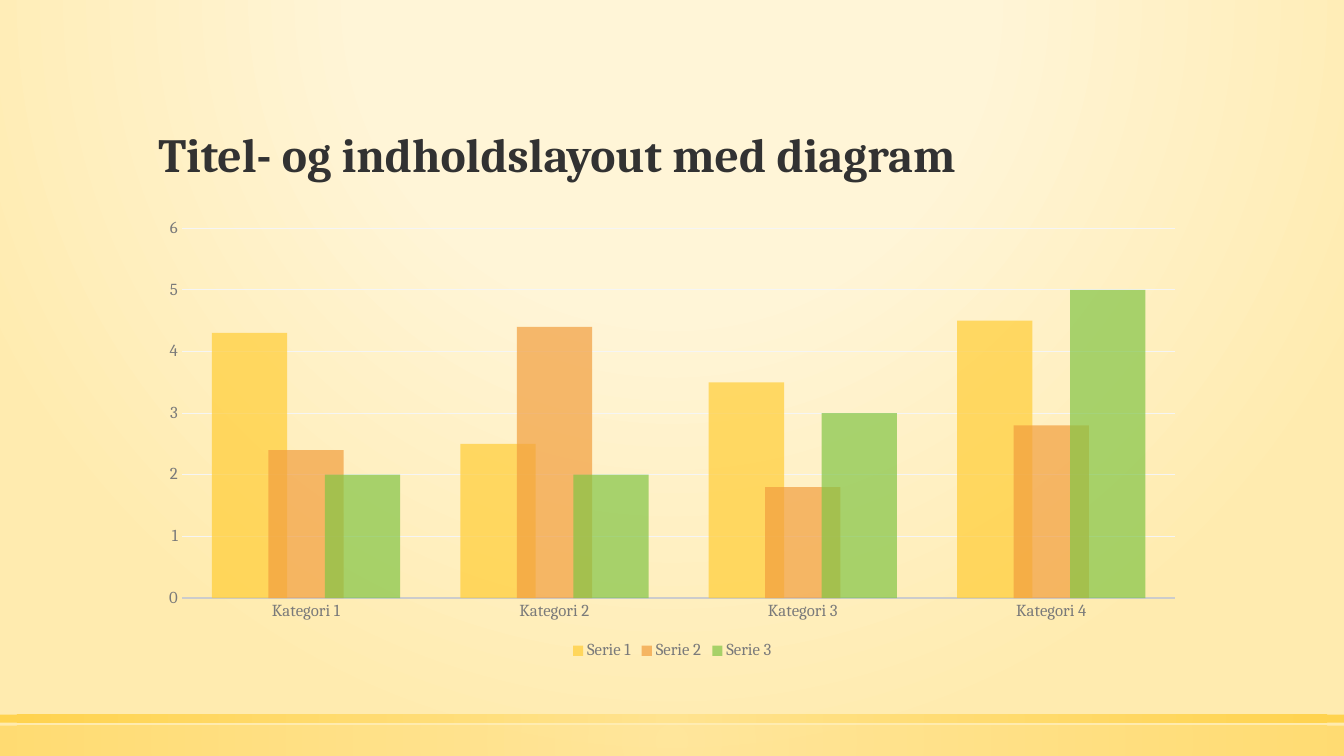
from lxml.etree import SubElement
from pptx import Presentation
from pptx.chart.data import CategoryChartData
from pptx.dml.color import RGBColor
from pptx.enum.chart import XL_CHART_TYPE, XL_LEGEND_POSITION, XL_TICK_MARK
from pptx.enum.shapes import MSO_SHAPE
from pptx.enum.text import MSO_ANCHOR, PP_ALIGN
from pptx.oxml.ns import qn
from pptx.util import Pt

INK = RGBColor(0x32, 0x32, 0x32)
GRAY = RGBColor(0x7A, 0x7A, 0x7A)
AXIS = RGBColor(0xCC, 0xCC, 0xCC)
GRID = RGBColor(0xF5, 0xF5, 0xF5)
CREAM = RGBColor(0xFF, 0xF5, 0xD7)
SAND = RGBColor(0xFF, 0xEB, 0xAF)
LEMON = RGBColor(0xFF, 0xE1, 0x86)
YELLOW = RGBColor(0xFF, 0xCD, 0x36)
ORANGE = RGBColor(0xF2, 0x9E, 0x3E)
GREEN = RGBColor(0x83, 0xC5, 0x46)

WIDTH, HEIGHT = 960, 540
LEFT, CONTENT_WIDTH = 105.84, 748.8

CATEGORIES = [f"Kategori {number}" for number in range(1, 5)]
SERIES = [
    ("Serie 1", (4.3, 2.5, 3.5, 4.5), YELLOW),
    ("Serie 2", (2.4, 4.4, 1.8, 2.8), ORANGE),
    ("Serie 3", (2, 2, 3, 5), GREEN),
]


def style_font(font, size, color, bold=False):
    font.name = "Cambria"
    font.size = Pt(size)
    font.bold = bold
    font.color.rgb = color


def write_text(frame, text, size=12, color=INK, bold=False,
               align=PP_ALIGN.LEFT, anchor=MSO_ANCHOR.TOP, spacing=1.0):
    frame.word_wrap = True
    frame.vertical_anchor = anchor
    para = frame.paragraphs[0]
    para.alignment = align
    para.line_spacing = spacing
    span = para.add_run()
    span.text = text
    style_font(span.font, size, color, bold)


def set_alpha(color_node, percent):
    SubElement(color_node, qn("a:alpha"), val=str(percent * 1000))


def radial_fill(fill, element, stops, focus=(50, 50, 50, 50)):
    fill.gradient()
    gradient = next(element.iter(qn("a:gradFill")))
    for child in list(gradient):
        gradient.remove(child)
    stop_list = SubElement(gradient, qn("a:gsLst"))
    for position, color, alpha in stops:
        stop = SubElement(stop_list, qn("a:gs"), pos=str(position * 1000))
        set_alpha(SubElement(stop, qn("a:srgbClr"), val=str(color)), alpha)
    shade = SubElement(gradient, qn("a:path"), {"path": "circle"})
    sides = {side: str(value * 1000) for side, value in zip("ltrb", focus)}
    SubElement(shade, qn("a:fillToRect"), sides)


class SlideBuilder:
    def __init__(self, deck):
        self.page = deck.slides.add_slide(deck.slide_layouts[5])

    def background(self, stops, focus):
        radial_fill(self.page.background.fill, self.page.element, stops, focus)

    def band(self, top, height, alpha):
        band = self.page.shapes.add_shape(
            MSO_SHAPE.RECTANGLE, 0, Pt(top), Pt(WIDTH), Pt(height))
        band.shadow.inherit = False
        radial_fill(band.fill, band.element,
                    [(0, LEMON, alpha), (100, YELLOW, alpha)])
        band.line.fill.background()

    def title(self, text, top, height):
        box = self.page.shapes.title
        box.left, box.top = Pt(LEFT), Pt(top)
        box.width, box.height = Pt(CONTENT_WIDTH), Pt(height)
        write_text(box.text_frame, text, size=34, bold=True,
                   anchor=MSO_ANCHOR.BOTTOM, spacing=0.9)

    def column_chart(self, top, height):
        data = CategoryChartData()
        data.categories = CATEGORIES
        for name, values, _ in SERIES:
            data.add_series(name, values)
        chart = self.page.shapes.add_chart(
            XL_CHART_TYPE.COLUMN_CLUSTERED, Pt(LEFT), Pt(top),
            Pt(CONTENT_WIDTH), Pt(height), data).chart
        style_font(chart.font, 10, INK)
        chart.has_title = False
        chart.has_legend = True
        chart.legend.position = XL_LEGEND_POSITION.BOTTOM
        chart.legend.include_in_layout = False
        style_font(chart.legend.font, 12, GRAY)
        self.format_axes(chart)
        self.format_series(chart.plots[0])

    def format_axes(self, chart):
        category, value = chart.category_axis, chart.value_axis
        for axis in (category, value):
            axis.major_tick_mark = XL_TICK_MARK.NONE
            axis.minor_tick_mark = XL_TICK_MARK.NONE
            style_font(axis.tick_labels.font, 12, GRAY)
        category.format.line.color.rgb = AXIS
        category.format.line.width = Pt(1.25)
        value.format.line.fill.background()
        value.minimum_scale, value.maximum_scale, value.major_unit = 0, 6, 1
        value.has_major_gridlines = True
        grid = value.major_gridlines.format.line
        grid.color.rgb = GRID
        grid.width = Pt(0.75)

    def format_series(self, plot):
        plot.vary_by_categories = False
        plot.gap_width = 80
        plot.overlap = 25
        for series, (_, _, color) in zip(plot.series, SERIES):
            series.invert_if_negative = False
            series.format.fill.solid()
            series.format.fill.fore_color.rgb = color
            set_alpha(next(series.format.element.iter(qn("a:srgbClr")))
                      if hasattr(series.format, "element")
                      else next(series._element.iter(qn("a:srgbClr"))), 70)
            series.format.line.fill.background()


def main():
    deck = Presentation()
    deck.slide_width, deck.slide_height = Pt(WIDTH), Pt(HEIGHT)
    builder = SlideBuilder(deck)
    builder.background([(0, CREAM, 59), (40, CREAM, 66), (100, SAND, 100)],
                       focus=(50, -80, 50, 180))
    builder.band(top=518.4, height=21.6, alpha=50)
    builder.band(top=510.48, height=5.76, alpha=80)
    builder.title("Titel- og indholdslayout med diagram", top=36.72, height=97.2)
    builder.column_chart(top=149.76, height=324.72)
    deck.save("out.pptx")


if __name__ == "__main__":
    main()
